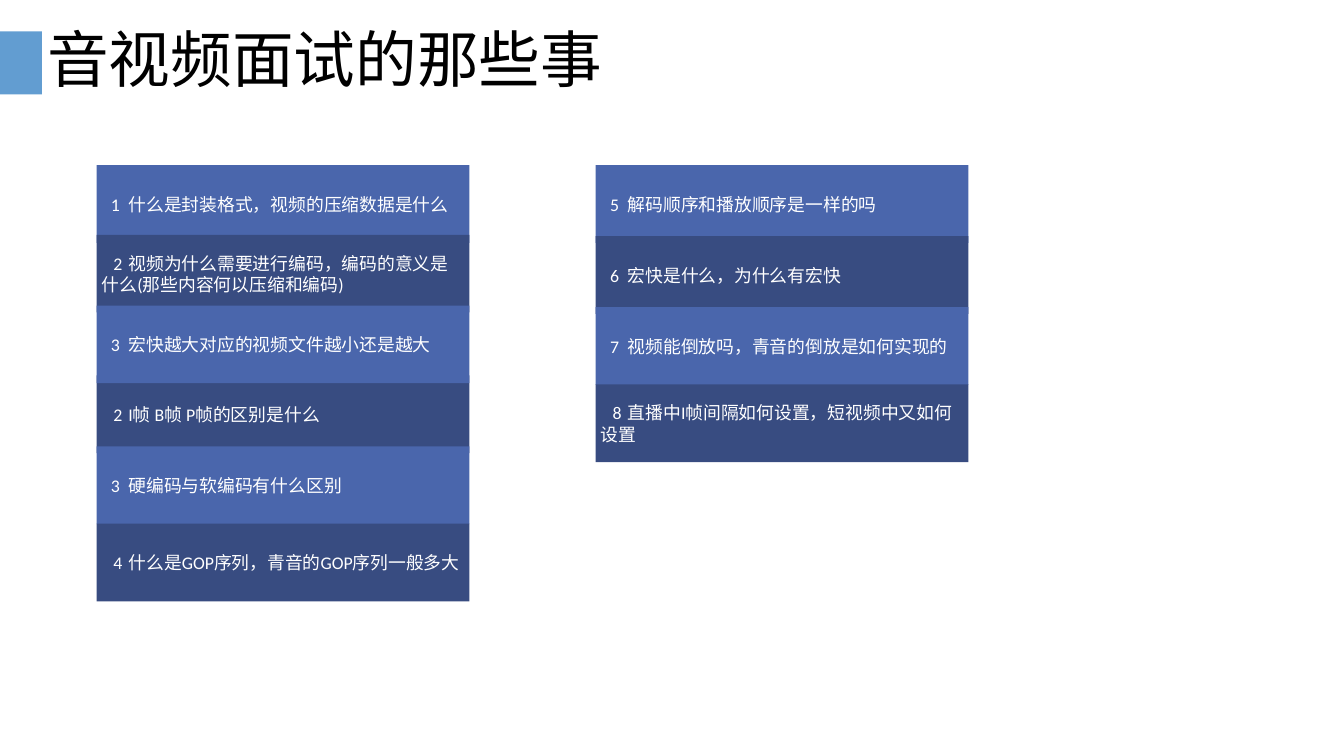
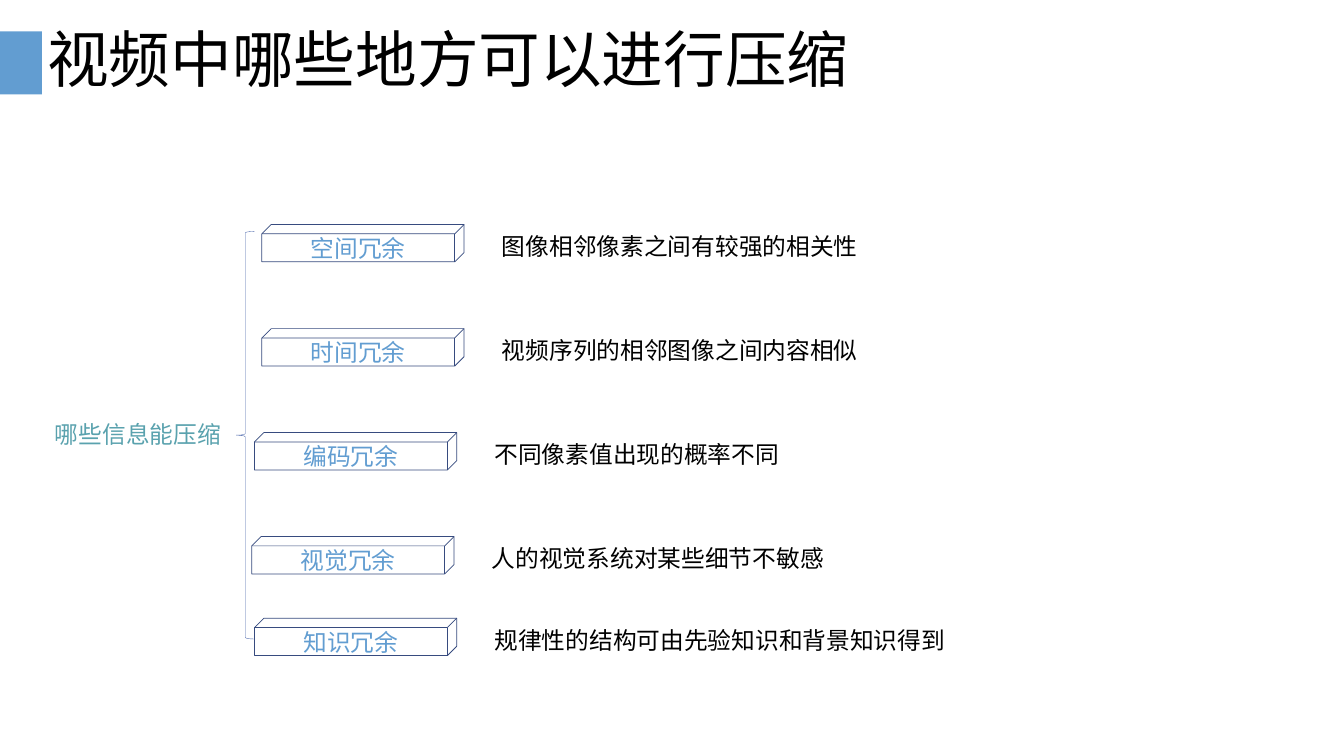
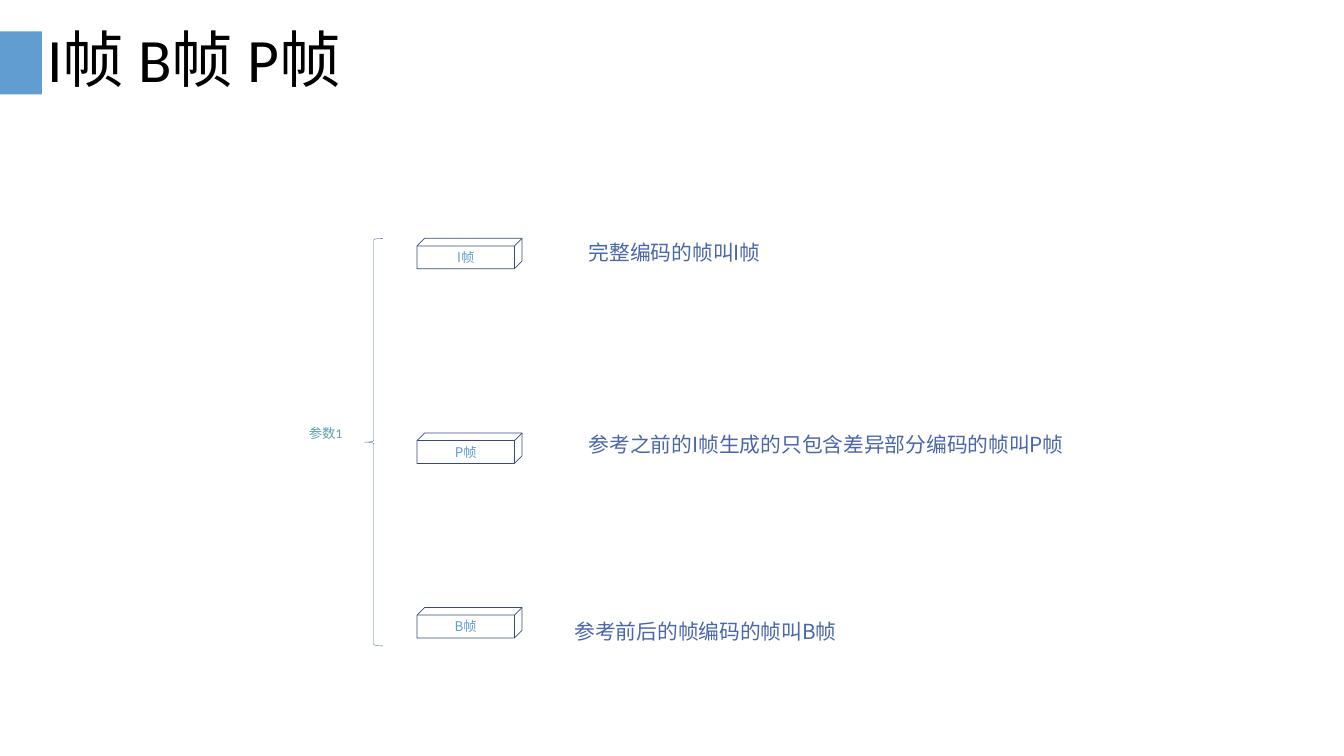
from dataclasses import dataclass
from typing import Any

from lxml import etree
from pptx import Presentation
from pptx.dml.color import RGBColor
from pptx.enum import shapes, text
from pptx.oxml import ns
from pptx.util import Cm, Pt

BLACK = RGBColor(0x00, 0x00, 0x00)
WHITE = RGBColor(0xFF, 0xFF, 0xFF)
SKY = RGBColor(0x62, 0x9D, 0xD1)
BLUE = RGBColor(0x4A, 0x66, 0xAC)
NAVY = RGBColor(0x38, 0x4C, 0x81)
OUTLINE = RGBColor(0x37, 0x4B, 0x7F)
TEAL = RGBColor(0x5A, 0xA2, 0xAE)

LATIN = "Calibri"
CHINESE = "Noto Sans CJK SC"

LEFT_COLUMN = 4.6
RIGHT_COLUMN = 28.37
BRACE_WIDTH, BRACE_HEIGHT = 0.86, 19.41


@dataclass
class Area:
    left: float
    top: float
    width: float
    height: float

    def lengths(self) -> tuple[Cm, Cm, Cm, Cm]:
        return Cm(self.left), Cm(self.top), Cm(self.width), Cm(self.height)


@dataclass
class Style:
    size: float
    color: RGBColor
    font: str = LATIN
    line_spacing: float | None = None


@dataclass
class Question:
    left: float
    top: float
    fill: RGBColor
    number: int
    wording: str
    indent: float = 0.43


@dataclass
class Branch:
    label: str
    label_area: Area
    note: str
    note_area: Area


@dataclass
class Tree:
    title: str
    root: str
    root_area: Area
    root_style: Style
    brace_left: float
    brace_top: float
    label_style: Style
    note_style: Style
    branches: list[Branch]
    grouped: bool


def redundancy(label: str, note: str, left: float, top: float) -> Branch:
    return Branch(label, Area(left, top, 9.63, 1.78),
                  note, Area(left + 11.3, top - 0.47, 38.23, 2.08))


def frame_kind(label: str, top: float, note: str, note_left: float,
               note_top: float, note_width: float) -> Branch:
    return Branch(label, Area(19.86, top, 5, 1.45),
                  note, Area(note_left, note_top, note_width, 1.85))


QUESTIONS = [
    Question(LEFT_COLUMN, 7.87, BLUE, 1, "什么是封装格式，视频的压缩数据是什么"),
    Question(LEFT_COLUMN, 17.88, NAVY, 2, "I帧 B帧 P帧的区别是什么", 0.55),
    Question(LEFT_COLUMN, 21.26, BLUE, 3, "硬编码与软编码有什么区别"),
    Question(LEFT_COLUMN, 24.94, NAVY, 4, "什么是GOP序列，青音的GOP序列一般多大", 0.55),
    Question(RIGHT_COLUMN, 7.87, BLUE, 5, "解码顺序和播放顺序是一样的吗"),
    Question(RIGHT_COLUMN, 11.25, NAVY, 6, "宏快是什么，为什么有宏快"),
    Question(RIGHT_COLUMN, 14.63, BLUE, 7, "视频能倒放吗，青音的倒放是如何实现的"),
    Question(RIGHT_COLUMN, 18.31, NAVY, 8, "直播中I帧间隔如何设置，短视频中又如何设置", 0.55),
    Question(LEFT_COLUMN, 11.18, NAVY, 2,
             "视频为什么需要进行编码，编码的意义是什么(那些内容何以压缩和编码)", 0.55),
    Question(LEFT_COLUMN, 14.55, BLUE, 3, "宏快越大对应的视频文件越小还是越大"),
]

TREES = [
    Tree("视频中哪些地方可以进行压缩", "哪些信息能压缩",
         Area(2.49, 19.86, 10.21, 1.63), Style(32, TEAL), 11.25, 11.02,
         Style(32, SKY, CHINESE), Style(32, BLACK, CHINESE, 1.5),
         [redundancy("空间冗余", "图像相邻像素之间有较强的相关性", 12.47, 10.69),
          redundancy("时间冗余", "视频序列的相邻图像之间内容相似", 12.47, 15.65),
          redundancy("编码冗余", "不同像素值出现的概率不同", 12.12, 20.6),
          redundancy("视觉冗余", "人的视觉系统对某些细节不敏感", 11.99, 25.55),
          redundancy("知识冗余", "规律性的结构可由先验知识和背景知识得到", 12.12, 29.44)],
         True),
    Tree("I帧 B帧 P帧", "参数1",
         Area(14.58, 20.12, 3.02, 1.27), Style(18, TEAL), 17.37, 11.35,
         Style(18, SKY, CHINESE), Style(28, BLUE, CHINESE, 1.5),
         [frame_kind("I帧", 11.35, "完整编码的帧叫I帧", 27.91, 10.69, 11.23),
          frame_kind("P帧", 20.62, "参考之前的I帧生成的只包含差异部分编码的帧叫P帧",
                     27.91, 19.84, 29.44),
          frame_kind("B帧", 28.93, "参考前后的帧编码的帧叫B帧", 27.23, 28.73, 29.44)],
         False),
]


def write(box: Any, wording: str, style: Style, align: Any = text.PP_ALIGN.LEFT) -> Any:
    box.text_frame.text = wording
    para = box.text_frame.paragraphs[0]
    para.alignment = align
    if style.line_spacing:
        para.line_spacing = style.line_spacing
    for span in para.runs:
        span.font.size = Pt(style.size)
        span.font.name = style.font
        span.font.color.rgb = style.color
        east_asian = etree.SubElement(span.font._element, ns.qn("a:ea"))
        east_asian.set("typeface", CHINESE)
    return para


def add_shape(container: Any, kind: Any, area: Area, fill: RGBColor | None = None,
              line: RGBColor | None = None, line_width: float = 1) -> Any:
    box = container.add_shape(kind, *area.lengths())
    box.shadow.inherit = False
    if fill is None:
        box.fill.background()
    else:
        box.fill.solid()
        box.fill.fore_color.rgb = fill
    if line is None:
        box.line.fill.background()
    else:
        box.line.color.rgb = line
        box.line.width = Pt(line_width)
    box.text_frame.vertical_anchor = text.MSO_ANCHOR.MIDDLE
    return box


def add_note(container: Any, wording: str, area: Area, style: Style) -> None:
    box = container.add_textbox(*area.lengths())
    frame = box.text_frame
    frame.word_wrap = True
    frame.auto_size = text.MSO_AUTO_SIZE.SHAPE_TO_FIT_TEXT
    frame.margin_left = frame.margin_right = Cm(0.13)
    frame.margin_top = frame.margin_bottom = Cm(0.13)
    write(box, wording, style)


def add_page(deck: Any, layout: Any, title: str) -> Any:
    page = deck.slides.add_slide(layout)
    box = page.shapes.title
    box.left, box.top, box.width, box.height = Area(2, 1.45, 60, 3.05).lengths()
    box.text_frame.vertical_anchor = text.MSO_ANCHOR.MIDDLE
    box.text_frame.auto_size = text.MSO_AUTO_SIZE.NONE
    write(box, title, Style(83.2, BLACK, line_spacing=0.9))
    return page


def add_question(page: Any, question: Question) -> None:
    area = Area(question.left, question.top, 17.75, 3.7)
    box = add_shape(page.shapes, shapes.MSO_SHAPE.RECTANGLE, area, fill=question.fill)
    para = write(box, f"{question.number}\t{question.wording}", Style(24, WHITE))
    properties = para._p.get_or_add_pPr()
    properties.set("marL", "0")
    properties.set("indent", str(Cm(question.indent)))
    tabs = etree.SubElement(properties, ns.qn("a:tabLst"))
    etree.SubElement(tabs, ns.qn("a:tab"), pos=str(Cm(question.indent + 1)), algn="l")


def add_tree(page: Any, tree: Tree) -> None:
    add_note(page.shapes, tree.root, tree.root_area, tree.root_style)
    brace = Area(tree.brace_left, tree.brace_top, BRACE_WIDTH, BRACE_HEIGHT)
    add_shape(page.shapes, shapes.MSO_SHAPE.LEFT_BRACE, brace, line=BLUE, line_width=0.5)
    for branch in tree.branches:
        container = page.shapes.add_group_shape().shapes if tree.grouped else page.shapes
        cube = add_shape(container, shapes.MSO_SHAPE.CUBE, branch.label_area, line=OUTLINE)
        write(cube, branch.label, tree.label_style, text.PP_ALIGN.CENTER)
        add_note(container, branch.note, branch.note_area, tree.note_style)


def main() -> None:
    deck = Presentation()
    deck.slide_width, deck.slide_height = Cm(64), Cm(36)
    layout = deck.slide_layouts[5]

    page = add_page(deck, layout, "音视频面试的那些事")
    accent = add_shape(page.shapes, shapes.MSO_SHAPE.RECTANGLE, Area(0, 1.5, 2, 3), fill=SKY)
    layout.shapes.element.append(accent.element)
    for question in QUESTIONS:
        add_question(page, question)

    for tree in TREES:
        add_tree(add_page(deck, layout, tree.title), tree)

    deck.save("out.pptx")


if __name__ == "__main__":
    main()
